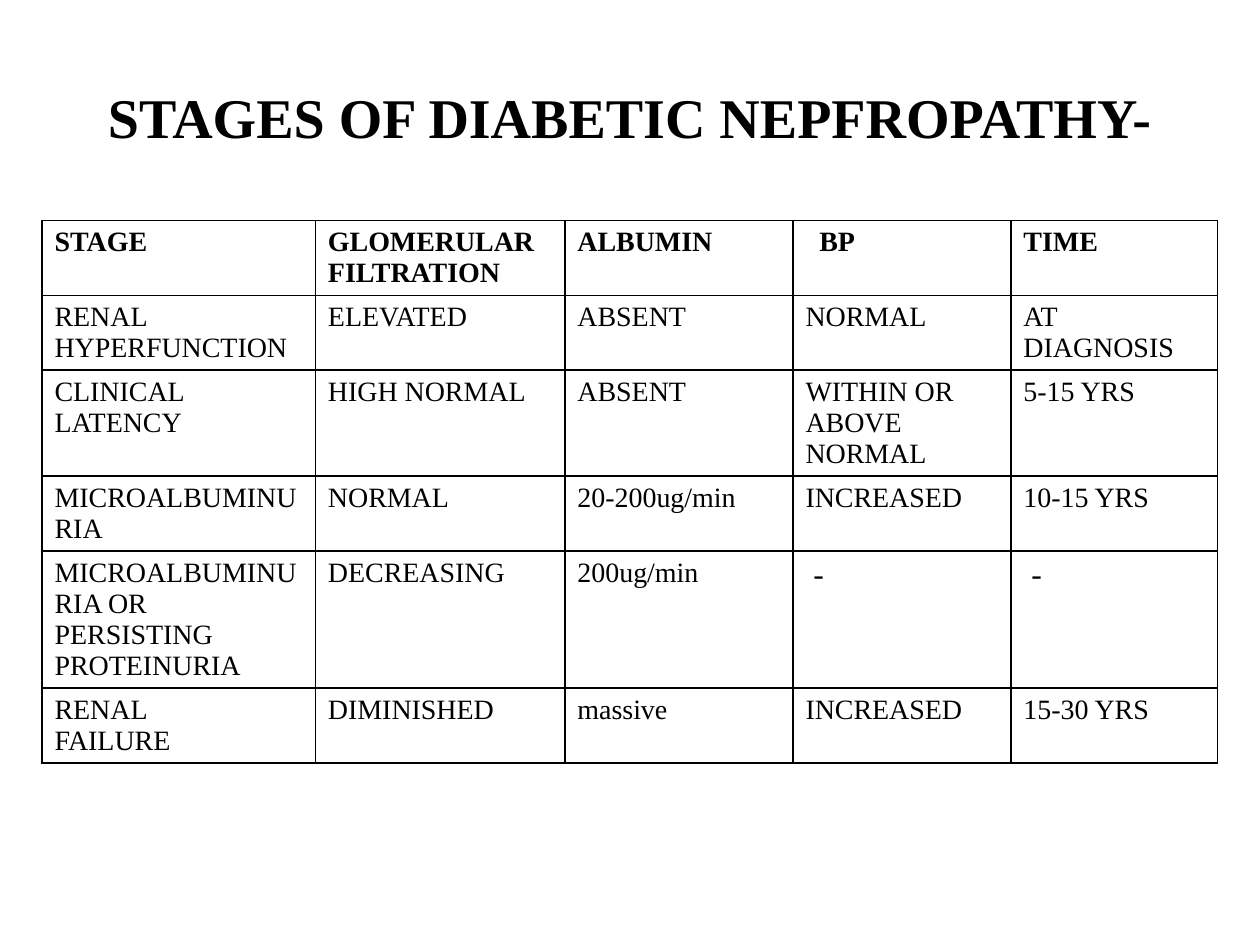
from lxml.etree import SubElement
from pptx import Presentation
from pptx.dml.color import RGBColor
from pptx.enum.text import MSO_ANCHOR, PP_ALIGN
from pptx.oxml.ns import qn
from pptx.util import Inches, Pt

HEADINGS = ["STAGE", "GLOMERULAR\nFILTRATION", "ALBUMIN", "BP", "TIME"]
STAGES = [
    ["RENAL\nHYPERFUNCTION", "ELEVATED", "ABSENT", "NORMAL", "AT\nDIAGNOSIS"],
    ["CLINICAL\nLATENCY", "HIGH NORMAL", "ABSENT", "WITHIN OR ABOVE NORMAL", "5-15 YRS"],
    ["MICROALBUMINURIA", "NORMAL", "20-200ug/min", "INCREASED", "10-15 YRS"],
    ["MICROALBUMINURIA OR\nPERSISTING PROTEINURIA", "DECREASING", "200ug/min", " -", " -"],
    ["RENAL\nFAILURE", "DIMINISHED", "massive", "INCREASED", "15-30 YRS"],
]
COLUMN_WIDTHS = [2.17, 1.98, 1.81, 1.73, 1.64]
ROW_HEIGHT = 0.41


def color(value):
    return RGBColor.from_string(value)


class SlideBuilder:
    font_name = "Times New Roman"
    ink = "000000"
    paper = "FFFFFF"

    def __init__(self, presentation):
        self.width = presentation.slide_width
        self.height = presentation.slide_height
        self.slide = presentation.slides.add_slide(presentation.slide_layouts[5])
        self.slide.background.fill.solid()
        self.slide.background.fill.fore_color.rgb = color(self.paper)

    def box(self, left, top, width, height):
        return (round(left * self.width), round(top * self.height),
                round(width * self.width), round(height * self.height))

    def style(self, paragraph, size, bold):
        font = paragraph.font
        font.name = self.font_name
        font.size = Pt(size)
        font.bold = bold
        font.color.rgb = color(self.ink)

    def title(self, text, left, top, width, height):
        shape = self.slide.shapes.title
        shape.left, shape.top, shape.width, shape.height = self.box(left, top, width, height)
        frame = shape.text_frame
        frame.text = text
        frame.vertical_anchor = MSO_ANCHOR.MIDDLE
        paragraph = frame.paragraphs[0]
        paragraph.alignment = PP_ALIGN.CENTER
        self.style(paragraph, 32, True)

    def borders(self, cell):
        properties = cell._tc.get_or_add_tcPr()
        for index, side in enumerate(("lnL", "lnR", "lnT", "lnB")):
            line = properties.makeelement(qn(f"a:{side}"), {"w": str(Pt(1))})
            fill = SubElement(line, qn("a:solidFill"))
            SubElement(fill, qn("a:srgbClr"), val=self.ink)
            properties.insert(index, line)

    def cell(self, cell, text, bold):
        cell.text = text
        cell.fill.background()
        self.borders(cell)
        size = 18 if text == " -" else 16
        for paragraph in cell.text_frame.paragraphs:
            self.style(paragraph, size, bold)

    def table(self, rows, column_widths, row_height, left, top, width, height):
        frame = self.slide.shapes.add_table(
            len(rows), len(column_widths), *self.box(left, top, width, height))
        table = frame.table
        for column, column_width in zip(table.columns, column_widths):
            column.width = Inches(column_width)
        for row_index, texts in enumerate(rows):
            table.rows[row_index].height = Inches(row_height)
            for column_index, text in enumerate(texts):
                self.cell(table.cell(row_index, column_index), text, row_index == 0)
        return table


def main():
    presentation = Presentation()
    presentation.slide_width = Inches(10)
    presentation.slide_height = Inches(7.5)
    builder = SlideBuilder(presentation)
    builder.title("STAGES OF DIABETIC NEPFROPATHY-", 0.05, 0.04, 0.9, 1 / 6)
    table = builder.table([HEADINGS] + STAGES, COLUMN_WIDTHS, ROW_HEIGHT,
                          1 / 30, 7 / 30, 28 / 30, 0.61)
    table.cell(0, HEADINGS.index("BP")).margin_left = Inches(0.21)
    presentation.save("out.pptx")


if __name__ == "__main__":
    main()
